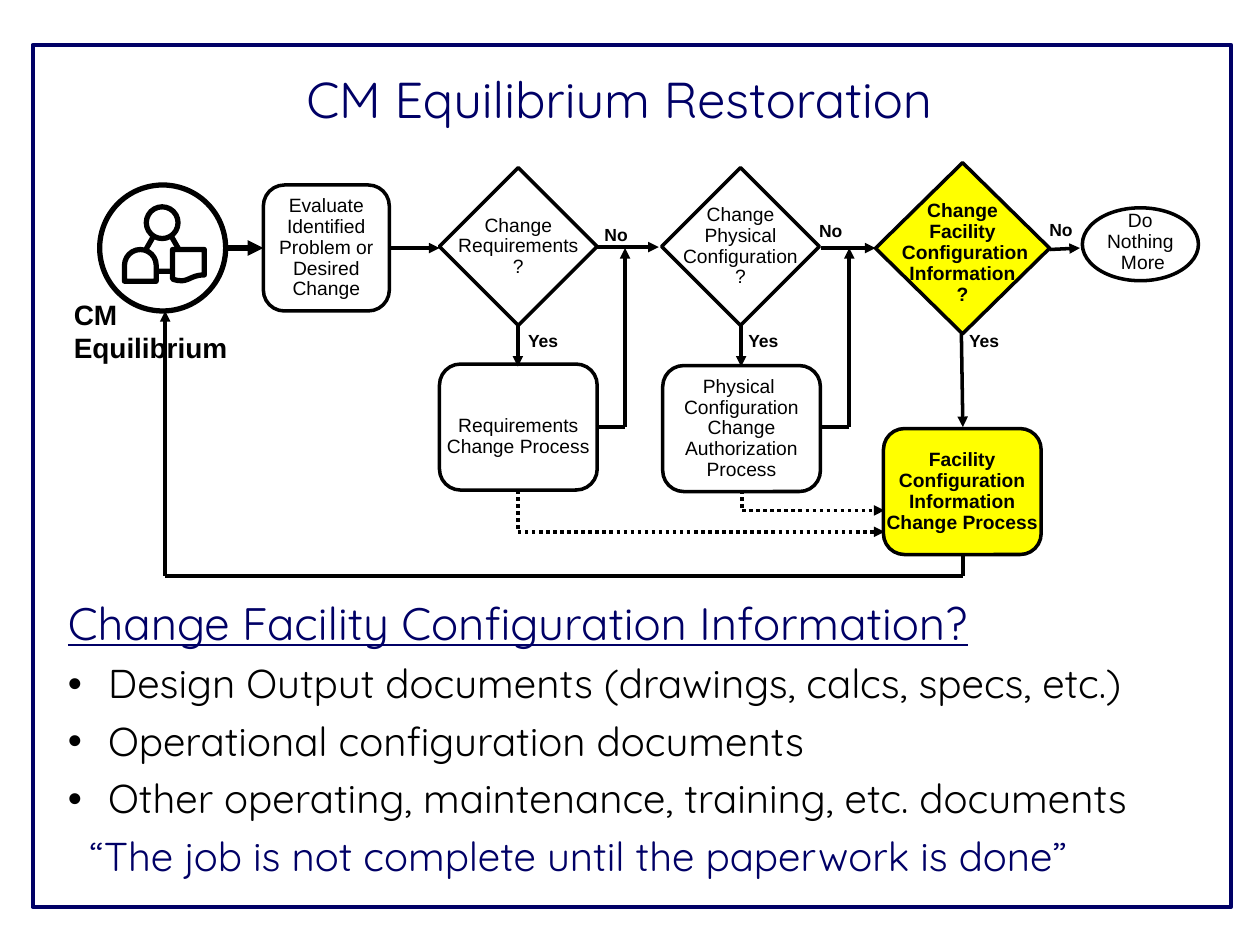
"""Build the CM Equilibrium Restoration flowchart slide."""
from dataclasses import dataclass

from lxml.etree import SubElement as Sub
from pptx import Presentation
from pptx.dml.color import RGBColor as Rgb
from pptx.enum.dml import MSO_LINE as Dash
from pptx.enum.shapes import MSO_CONNECTOR as Link, MSO_SHAPE as Kind
from pptx.enum.text import MSO_ANCHOR as Anchor, PP_ALIGN as Align
from pptx.oxml.ns import qn
from pptx.util import Cm, Pt

HUES = {"navy": "000066", "ink": "000000", "white": "FFFFFF", "gold": "FFFF00"}
PADS = (0.25, 0.13, 0.25, 0.13)
ROW, SIDE, WIDE, ICON = 5.0, 2.54, 3.18, 0.64


@dataclass
class Node:
    kind: Kind
    box: tuple
    text: str = ""
    fill: str = "white"
    edge: float = 2
    hue: str = "ink"
    bold: bool = False
    pads: tuple = PADS
    turn: int = 0


@dataclass
class Wire:
    dots: list
    edge: float = 2
    dash: bool = False


@dataclass
class Label:
    text: str
    box: tuple
    size: int = 10
    align: Align = Align.CENTER


@dataclass
class Line:
    text: str
    size: int = 23
    hue: str = "ink"
    mark: bool = False
    under: bool = False
    left: float = 0


NODES = [
    Node(Kind.OVAL, (2.01, 3.73, SIDE, SIDE), edge=3),
    Node(Kind.ISOSCELES_TRIANGLE, (2.69, 4.45, 1.17, 1.02), fill="", edge=3),
    Node(Kind.OVAL, (2.95, 4.17, ICON, ICON), edge=3),
    Node(Kind.FLOWCHART_DOCUMENT, (3.48, 5.03, ICON, ICON), edge=3),
    Node(Kind.FLOWCHART_DELAY, (2.51, 5.03, ICON, ICON), edge=3, turn=270),
    Node(Kind.ROUNDED_RECTANGLE, (5.31, 3.73, SIDE, SIDE),
         "Evaluate\nIdentified\nProblem or\nDesired\nChange"),
    Node(Kind.DIAMOND, (8.86, 3.38, WIDE, WIDE), "Change\nRequirements\n?"),
    Node(Kind.DIAMOND, (13.34, 3.38, WIDE, WIDE),
         "Change\nPhysical\nConfiguration\n?"),
    Node(Kind.DIAMOND, (17.65, 3.28, 3.51, 3.45),
         "Change\nFacility\n Configuration\nInformation\n?",
         "gold", bold=True, pads=(0, 0.2, 0, 0)),
    Node(Kind.OVAL, (21.82, 4.19, 2.34, 1.47), "Do\nNothing\n More", "",
         pads=(0.25, 0.05, 0.25, 0.13)),
    Node(Kind.ROUNDED_RECTANGLE, (8.86, 7.34, WIDE, SIDE),
         "Requirements\nChange Process", pads=(0.25, 0.53, 0.25, 0.13)),
    Node(Kind.ROUNDED_RECTANGLE, (13.36, 7.37, WIDE, SIDE),
         "Physical \nConfiguration\nChange\nAuthorization\nProcess"),
    Node(Kind.ROUNDED_RECTANGLE, (17.81, 8.64, WIDE, SIDE),
         "Facility\nConfiguration\nInformation\nChange Process",
         "gold", bold=True),
]
FRAME = Node(Kind.RECTANGLE, (0.66, 0.91, 24.16, 17.37), "", "", 2.5, "navy")

WIRES = [
    Wire([(4.55, ROW), (5.31, ROW)], 3),
    Wire([(7.85, ROW), (8.86, ROW)]),
    Wire([(12.01, 4.98), (13.28, 4.98)]),
    Wire([(16.56, ROW), (17.65, ROW)]),
    Wire([(21.16, 5.03), (21.77, ROW)]),
    Wire([(10.44, 6.53), (10.44, 7.39)]),
    Wire([(14.94, 6.55), (14.94, 7.39)]),
    Wire([(19.38, 6.73), (19.41, 8.61)]),
    Wire([(12.01, 8.61), (12.6, 8.61), (12.6, ROW)]),
    Wire([(16.51, 8.61), (17.12, 8.61), (17.12, ROW)]),
    Wire([(10.44, 9.88), (10.44, 10.72), (17.83, 10.72)], dash=True),
    Wire([(14.96, 9.88), (14.96, 10.29), (17.83, 10.29)], dash=True),
    Wire([(19.41, 11.15), (19.41, 11.61), (3.33, 11.61), (3.33, 6.27)]),
]

LABELS = [
    Label("CM Equilibrium", (1.24, 5.87, 3.68, 1.63), 16, Align.LEFT),
    Label("No", (11.66, 4.39, 1.52, 0.69)),
    Label("No", (16.15, 4.32, 1.19, 0.69)),
    Label("No", (20.78, 4.29, 1.22, 0.69)),
    *[Label("Yes", (x, 6.53, 1.52, 0.69)) for x in (10.19, 14.63, 19.08)],
]

LINES = [
    Line("Change Facility Configuration Information?", 26, "navy", under=True),
    Line("Design Output documents (drawings, calcs, specs, etc.)", mark=True),
    Line("Operational configuration documents", mark=True),
    Line("Other operating, maintenance, training, etc. documents", mark=True),
    Line("“The job is not complete until the paperwork is done”",
         hue="navy", left=0.44),
]


def tint(name: str) -> Rgb:
    """Return a named colour."""
    return Rgb.from_string(HUES[name])


def place(shape, box: tuple) -> None:
    """Move and size a shape."""
    shape.left, shape.top, shape.width, shape.height = map(Cm, box)


def write(para, text: str, size: float, hue: str = "ink",
          face: str = "Arial", bold: bool = False):
    """Add one styled run and return it."""
    run = para.add_run()
    run.text = text
    font = run.font
    font.name, font.size, font.bold = face, Pt(size), bold
    font.color.rgb = tint(hue)
    return run


def draw_node(slide, node: Node) -> None:
    """Draw a shape with its centred lines of text."""
    shape = slide.shapes.add_shape(node.kind, *map(Cm, node.box))
    shape.shadow.inherit = False
    shape.rotation = node.turn
    if node.fill:
        shape.fill.solid()
        shape.fill.fore_color.rgb = tint(node.fill)
    else:
        shape.fill.background()
    shape.line.color.rgb = tint(node.hue)
    shape.line.width = Pt(node.edge)
    if not node.text:
        return
    frame = shape.text_frame
    frame.word_wrap, frame.vertical_anchor = False, Anchor.MIDDLE
    (frame.margin_left, frame.margin_top,
     frame.margin_right, frame.margin_bottom) = map(Cm, node.pads)
    para = frame.paragraphs[0]
    para.alignment, para.line_spacing = Align.CENTER, 0.9
    for num, text in enumerate(node.text.split("\n")):
        if num:
            para.add_line_break()
        write(para, text, 11, bold=node.bold)


def draw_wire(slide, wire: Wire) -> None:
    """Draw straight legs with an arrowhead on the last."""
    for start, end in zip(wire.dots, wire.dots[1:]):
        leg = slide.shapes.add_connector(
            Link.STRAIGHT, *map(Cm, start + end))
        leg.line.color.rgb = tint("ink")
        leg.line.width = Pt(wire.edge)
        if wire.dash:
            leg.line.dash_style = Dash.ROUND_DOT
        props = leg.element.spPr
        if end == wire.dots[-1]:
            Sub(props.find(qn("a:ln")), qn("a:tailEnd"), type="triangle")
        Sub(props, qn("a:effectLst"))


def draw_label(slide, label: Label) -> None:
    """Draw a bold caption."""
    frame = slide.shapes.add_textbox(*map(Cm, label.box)).text_frame
    frame.word_wrap = True
    para = frame.paragraphs[0]
    para.alignment = label.align
    write(para, label.text, label.size, bold=True)


def draw_body(slide, lines: list[Line]) -> None:
    """Draw the heading, bullets and closing quote."""
    frame = slide.shapes.add_textbox(
        *map(Cm, (1.12, 11.99, 23.7, 5.92))).text_frame
    frame.word_wrap = True
    for num, line in enumerate(lines):
        para = frame.add_paragraph() if num else frame.paragraphs[0]
        para.line_spacing, para.space_before = 0.9, Pt(8 if num else 0)
        run = write(para, line.text, line.size, line.hue, "Quicksand")
        run.font.underline = line.under
        props = para._p.get_or_add_pPr()
        props.set("marL", str(Cm(0.81 if line.mark else line.left)))
        if line.mark:
            props.set("indent", str(Cm(-0.81)))
            Sub(props, qn("a:buFont"), typeface="Arial")
            Sub(props, qn("a:buChar"), char="•")


def main() -> None:
    """Build and save the slide."""
    deck = Presentation()
    deck.slide_width, deck.slide_height = Cm(25.4), Cm(19.05)
    slide = deck.slides.add_slide(deck.slide_layouts[5])
    title = slide.shapes.title
    place(title, (5.92, 1.24, 16.08, 1.47))
    title.text_frame.vertical_anchor = Anchor.BOTTOM
    para = title.text_frame.paragraphs[0]
    para.alignment = Align.LEFT
    write(para, "CM Equilibrium Restoration", 28.8, "navy", "Quicksand")
    draw_body(slide, LINES)
    for node in NODES:
        draw_node(slide, node)
    for wire in WIRES:
        draw_wire(slide, wire)
    for label in LABELS:
        draw_label(slide, label)
    draw_node(slide, FRAME)
    deck.save("out.pptx")


if __name__ == "__main__":
    main()
